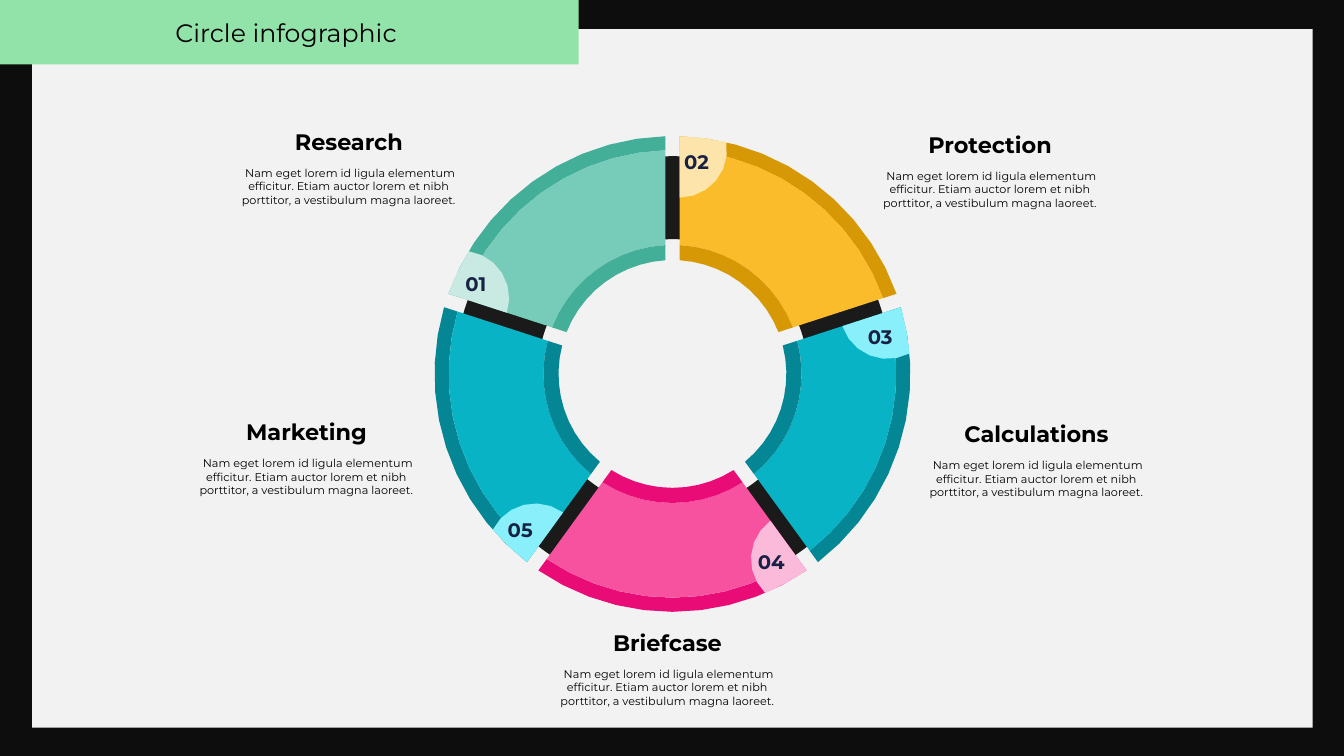
"""Builds a slide with a five-part circle infographic."""
from dataclasses import dataclass
from math import acos, asin, atan2, cos, hypot, pi, radians, sin

from pptx import Presentation
from pptx.dml.color import RGBColor
from pptx.enum.shapes import MSO_SHAPE
from pptx.enum.text import MSO_ANCHOR, MSO_AUTO_SIZE, PP_ALIGN
from pptx.util import Inches, Pt


@dataclass(frozen=True)
class Theme:
    font: str = "Montserrat"
    frame: str = "0D0D0D"
    panel: str = "F2F2F2"
    banner: str = "92E3A9"
    ring: str = "1A1A1A"
    text: str = "000000"
    number: str = "172144"
    green: tuple = ("43AF98", "77CBB9", "C9EAE3")
    yellow: tuple = ("D69805", "FABC2A", "FDE4AA")
    cyan: tuple = ("058694", "07B3C5", "89F0FB")
    pink: tuple = ("EA0C76", "F652A0", "FBBAD9")
    banner_size: int = 18
    heading_size: int = 16
    number_size: int = 14
    body_size: int = 8


theme = Theme()
CENTER_X, CENTER_Y = 6.67, 3.71
RIM, BODY_OUTER, BODY_INNER, HOLE = 2.36, 2.22, 1.28, 1.13
HALF_GAP = 0.07
BADGE_RADIUS = 0.47
SWEEP = 2 * pi / 5
BAND_STEPS, BADGE_STEPS = 10, 6
BODY_TEXT = (" Nam eget lorem id ligula elementum efficitur. Etiam auctor "
             "lorem et nibh porttitor, a vestibulum magna laoreet.")

deck = Presentation()
deck.slide_width, deck.slide_height = Inches(13.33), Inches(7.5)
slide = deck.slides.add_slide(deck.slide_layouts[5])
slide.background.fill.solid()
slide.background.fill.fore_color.rgb = RGBColor.from_string(theme.frame)


def draw_outline(polar_points, color):
    """Fill the outline given as (radius, angle) points around the centre."""
    points = [(Inches(CENTER_X + radius * cos(angle)),
               Inches(CENTER_Y + radius * sin(angle)))
              for radius, angle in polar_points]
    builder = slide.shapes.build_freeform(*points[0])
    builder.add_line_segments(points[1:], close=True)
    outline = builder.convert_to_shape()
    outline.shadow.inherit = False
    outline.fill.solid()
    outline.fill.fore_color.rgb = RGBColor.from_string(color)
    outline.line.fill.background()


def add_label(center_x, top, width, height, text, size, color, bold=False):
    """Add a centred text box without insets."""
    label = slide.shapes.add_textbox(Inches(center_x - width / 2), Inches(top),
                                     Inches(width), Inches(height)).text_frame
    label.word_wrap = True
    label.margin_left = label.margin_right = 0
    label.margin_top = label.margin_bottom = 0
    label.paragraphs[0].alignment = PP_ALIGN.CENTER
    run = label.paragraphs[0].add_run()
    run.text = text
    run.font.name, run.font.size, run.font.bold = theme.font, Pt(size), bold
    run.font.color.rgb = RGBColor.from_string(color)


panel = slide.shapes.add_shape(MSO_SHAPE.RECTANGLE, Inches(0.32), Inches(0.29),
                               Inches(12.7), Inches(6.93))
ring = slide.shapes.add_shape(MSO_SHAPE.DONUT, Inches(4.51), Inches(1.55),
                              Inches(4.33), Inches(4.33))
ring.adjustments[0] = 0.19
for backdrop, color in ((panel, theme.panel), (ring, theme.ring)):
    backdrop.shadow.inherit = False
    backdrop.fill.solid()
    backdrop.fill.fore_color.rgb = RGBColor.from_string(color)
    backdrop.line.fill.background()

topics = [
    ("Research", 3.46, 1.27, (4.72, 2.7), theme.green),
    ("Protection", 9.82, 1.3, (6.91, 1.49), theme.yellow),
    ("Calculations", 10.28, 4.17, (8.73, 3.22), theme.cyan),
    ("Briefcase", 6.62, 6.24, (7.65, 5.46), theme.pink),
    ("Marketing", 3.04, 4.15, (5.16, 5.14), theme.cyan),
]
badge_rim_angle = asin(HALF_GAP / BODY_OUTER) + acos(
    (RIM ** 2 + BODY_OUTER ** 2 - BADGE_RADIUS ** 2) / (2 * RIM * BODY_OUTER))
badge_turn = atan2(RIM * sin(badge_rim_angle) - HALF_GAP,
                   BODY_OUTER - RIM * cos(badge_rim_angle))
edge_angle = asin(HALF_GAP / RIM)

for index, (heading, label_x, label_top, number_at, tones) in enumerate(topics):
    rim_tone, body_tone, badge_tone = tones
    start = radians(-162) + index * SWEEP
    for outer, inner, tone in ((RIM, BODY_OUTER, rim_tone),
                               (BODY_OUTER, BODY_INNER, body_tone),
                               (BODY_INNER, HOLE, rim_tone)):
        band = []
        for radius, direction in ((outer, 1), (inner, -1)):
            inset = asin(HALF_GAP / radius)
            arc = [(radius,
                    start + inset + (SWEEP - 2 * inset) * step / BAND_STEPS)
                   for step in range(BAND_STEPS + 1)]
            band += arc[::direction]
        draw_outline(band, tone)

    badge = []
    for step in range(BADGE_STEPS + 1):
        turn = badge_turn * step / BADGE_STEPS
        along = BODY_OUTER - BADGE_RADIUS * cos(turn)
        across = HALF_GAP + BADGE_RADIUS * sin(turn)
        badge.append((hypot(along, across), start + atan2(across, along)))
    badge += [(RIM, start + (badge_rim_angle + edge_angle) / 2),
              (RIM, start + edge_angle)]
    draw_outline(badge, badge_tone)

    add_label(*number_at, 0.4, 0.24, f"{index + 1:02}",
              theme.number_size, theme.number, bold=True)
    add_label(label_x, label_top, 2.38, 0.27, heading,
              theme.heading_size, theme.text, bold=True)
    add_label(label_x, label_top + 0.38, 2.38, 0.4, BODY_TEXT,
              theme.body_size, theme.text)

banner = slide.shapes.title
banner.element.getparent().append(banner.element)
banner.left, banner.top = Inches(0), Inches(0)
banner.width, banner.height = Inches(5.74), Inches(0.64)
banner.fill.solid()
banner.fill.fore_color.rgb = RGBColor.from_string(theme.banner)
banner.text_frame.auto_size = MSO_AUTO_SIZE.NONE
banner.text_frame.vertical_anchor = MSO_ANCHOR.MIDDLE
banner.text_frame.paragraphs[0].alignment = PP_ALIGN.CENTER
banner_run = banner.text_frame.paragraphs[0].add_run()
banner_run.text = "Circle infographic "
banner_run.font.name = theme.font
banner_run.font.size = Pt(theme.banner_size)
banner_run.font.color.rgb = RGBColor.from_string(theme.text)

deck.save("out.pptx")
